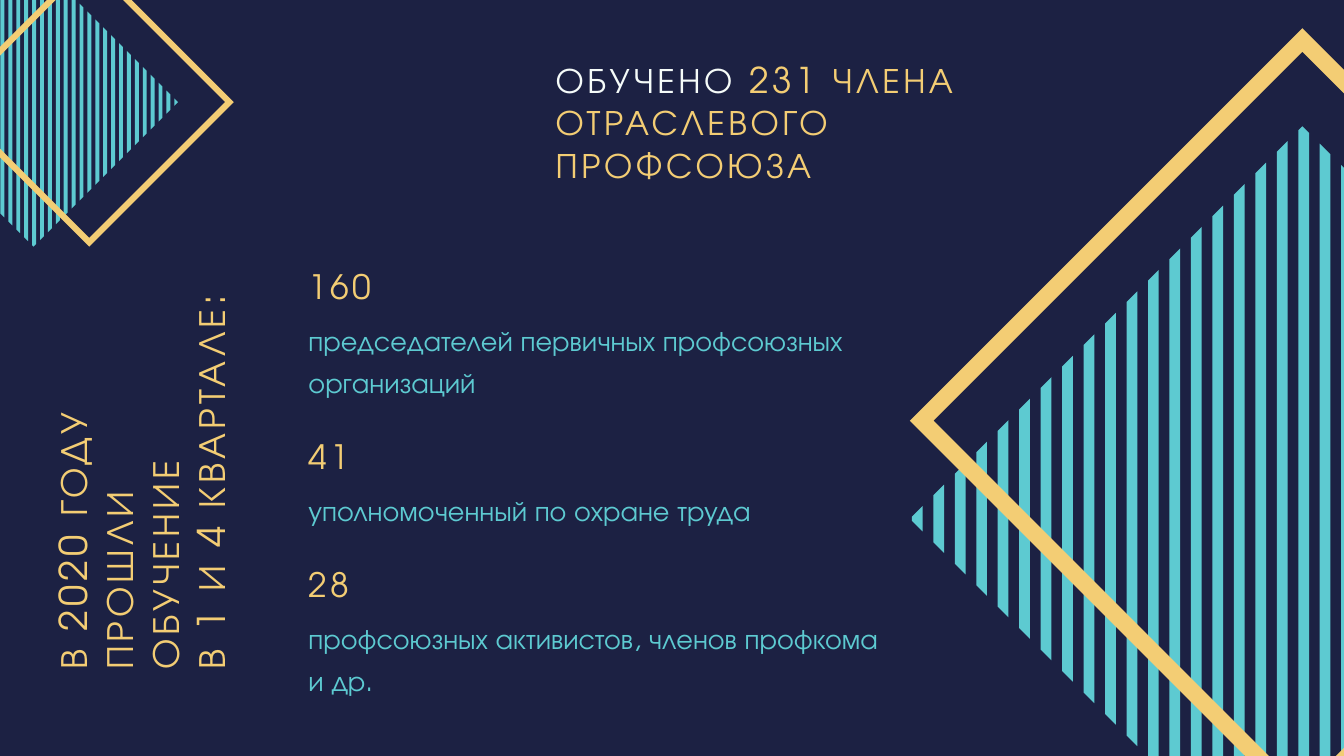
from pptx import Presentation
from pptx.dml.color import RGBColor
from pptx.enum.text import MSO_ANCHOR, MSO_AUTO_SIZE, PP_ALIGN
from pptx.util import Inches, Pt
from lxml import etree

TOP = MSO_ANCHOR.TOP
NO_FIT = MSO_AUTO_SIZE.NONE
LEFT = PP_ALIGN.LEFT

FONT = "TeX Gyre Adventor"
NAVY, GOLD, TEAL, WHITE = "1C2143", "F3CD74", "5DCAD1", "F5FBF9"
STRIPES = 37
DRAWING_NS = "http://schemas.openxmlformats.org/drawingml/2006/main"

HEADING = [("ОБУЧЕНО", WHITE), (" 231 ЧЛЕНА ОТРАСЛЕВОГО ПРОФСОЮЗА", GOLD)]
SIDE_LINES = ["В 2020 ГОДУ ПРОШЛИ ОБУЧЕНИЕ", "В 1 И 4 КВАРТАЛЕ:"]
TRAINED = [
    ("160", "председателей первичных профсоюзных организаций"),
    ("41", "уполномоченный по охране труда"),
    ("28", "профсоюзных активистов, членов профкома и др."),
]


def color(hex_string):
    return RGBColor.from_string(hex_string)


def add_outline(page, contours, fill):
    points = [[(Inches(x), Inches(y)) for x, y in contour] for contour in contours]
    builder = page.shapes.build_freeform(*points[0][0], scale=1.0)
    for index, contour in enumerate(points):
        if index:
            builder.move_to(*contour[0])
        builder.add_line_segments(contour[1:], close=True)
    shape = builder.convert_to_shape()
    shape.shadow.inherit = False
    shape.fill.solid()
    shape.fill.fore_color.rgb = color(fill)
    shape.line.fill.background()


def diamond(center_x, center_y, half):
    return [
        (center_x - half, center_y),
        (center_x, center_y + half),
        (center_x + half, center_y),
        (center_x, center_y - half),
    ]


def add_diamond_frame(page, center_x, center_y, half):
    outer = diamond(center_x, center_y, half)
    inner = diamond(center_x, center_y, half * 0.94)
    add_outline(page, [outer, inner[::-1]], GOLD)


def add_striped_diamond(page, center_x, center_y, half):
    pitch = half * 2 / (STRIPES - 0.44)
    contours = []
    for index in range(STRIPES):
        left = center_x - half * 0.995 + index * pitch
        right = min(left + pitch / 2, center_x + half)
        edges = [left, right]
        if left < center_x < right:
            edges.insert(1, center_x)
        reach = [(x, half - abs(x - center_x)) for x in edges]
        upper = [(x, center_y - rise) for x, rise in reach]
        lower = [(x, center_y + rise) for x, rise in reversed(reach)]
        contours.append(upper + lower)
    add_outline(page, contours, TEAL)


def prepare_box(box, left, top, width, height):
    box.left, box.top = Inches(left), Inches(top)
    box.width, box.height = Inches(width), Inches(height)
    frame = box.text_frame
    frame.margin_left = frame.margin_right = 0
    frame.margin_top = frame.margin_bottom = 0
    frame.word_wrap = True
    frame.auto_size = NO_FIT
    frame.vertical_anchor = TOP
    return frame


def format_para(para, line_points, before=0):
    para.alignment = LEFT
    para.line_spacing = Pt(line_points)
    para.space_before = Pt(before)
    para.space_after = Pt(0)


def format_span(span, size, fill, spacing=0):
    span.font.name = FONT
    span.font.size = Pt(size)
    span.font.color.rgb = color(fill)
    span.font._element.set("spc", str(round(spacing * 100)))


def remove_bullet(para):
    properties = para._p.get_or_add_pPr()
    properties.set("marL", "0")
    properties.set("indent", "0")
    etree.SubElement(properties, f"{{{DRAWING_NS}}}buNone")


def fill_heading(box, left, top, width, height):
    frame = prepare_box(box, left, top, width, height)
    para = frame.paragraphs[0]
    format_para(para, 45.6)
    for text, fill in HEADING:
        span = para.add_run()
        span.text = text
        format_span(span, 38, fill, 3.8)


def fill_trained_list(box, left, top, width, height):
    frame = prepare_box(box, left, top, width, height)
    frame.text = "\n".join(line for entry in TRAINED for line in entry)
    for index, para in enumerate(frame.paragraphs):
        if index % 2 == 0:
            format_para(para, 43.2, before=40 if index else 0)
            format_span(para.runs[0], 36, GOLD, 3.6)
        else:
            format_para(para, 45, before=9)
            format_span(para.runs[0], 30, TEAL)
        remove_bullet(para)


def add_side_label(page, left, top, width, height):
    box = page.shapes.add_textbox(0, 0, 0, 0)
    frame = prepare_box(box, left, top, width, height)
    box.rotation = 270
    frame.text = "\n".join(SIDE_LINES)
    for para in frame.paragraphs:
        format_para(para, 49.2)
        format_span(para.runs[0], 41, GOLD, 4.1)


def main():
    deck = Presentation()
    deck.slide_width, deck.slide_height = Inches(20), Inches(11.25)
    page = deck.slides.add_slide(deck.slide_layouts[1])
    page.background.fill.solid()
    page.background.fill.fore_color.rgb = color(NAVY)

    add_striped_diamond(page, 19.38, 7.72, 5.84)
    add_diamond_frame(page, 19.38, 6.26, 5.84)
    add_striped_diamond(page, 0.5, 1.52, 2.15)
    add_diamond_frame(page, 1.33, 1.52, 2.15)

    fill_heading(page.shapes.title, 8.27, 0.86, 7.42, 1.95)
    fill_trained_list(page.placeholders[1], 4.59, 3.96, 8.6, 6.36)
    add_side_label(page, -0.83, 5.59, 5.94, 2.81)
    deck.save("out.pptx")


if __name__ == "__main__":
    main()
